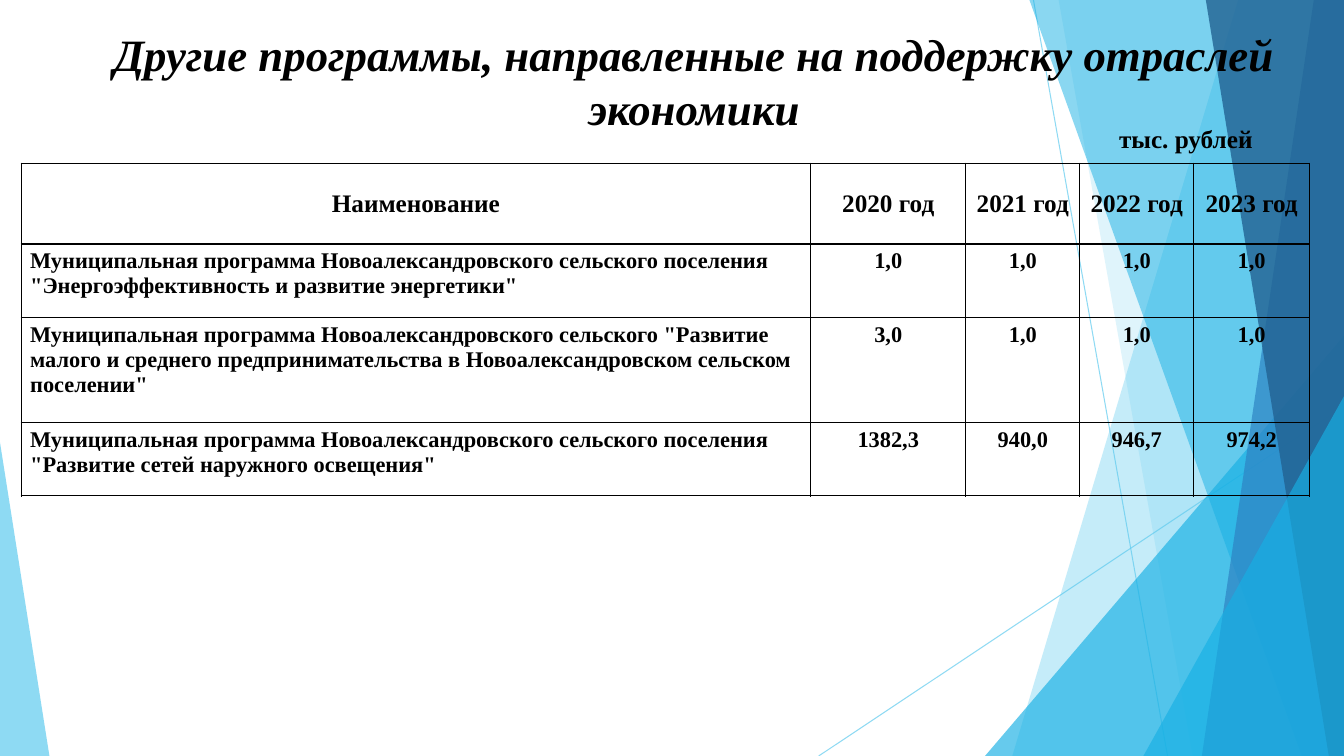
from lxml import etree
from pptx import Presentation
from pptx.dml.color import RGBColor
from pptx.enum import shapes, text
from pptx.oxml import parse_xml
from pptx.oxml.ns import nsdecls, qn
from pptx.util import Inches, Pt

BLACK = RGBColor(0, 0, 0)
SKY = RGBColor(0x5F, 0xCB, 0xEF)
CYAN = RGBColor(0x17, 0xB0, 0xE4)
BLUE = RGBColor(0x2E, 0x83, 0xC3)
NAVY = RGBColor(0x22, 0x62, 0x92)
FONT = "Times New Roman"
WIDTH, HEIGHT = 13.33, 7.5


def set_opacity(part, percent):
    color = part.find(".//" + qn("a:srgbClr"))
    etree.SubElement(color, qn("a:alpha")).set("val", str(percent * 1000))


def style_paragraph(paragraph, size, alignment):
    paragraph.alignment = alignment
    for run in paragraph.runs:
        run.font.name = FONT
        run.font.size = Pt(size)
        run.font.bold = True
        run.font.color.rgb = BLACK


prs = Presentation()
prs.slide_width, prs.slide_height = Inches(WIDTH), Inches(HEIGHT)
slide = prs.slides.add_slide(prs.slide_layouts[5])

# Thin rays
for x1, y1, x2, y2 in [(10.25, 0, 11.58, HEIGHT), (WIDTH, 4.03, 8.12, HEIGHT)]:
    ray = slide.shapes.add_connector(
        shapes.MSO_CONNECTOR.STRAIGHT, Inches(x1), Inches(y1), Inches(x2), Inches(y2))
    ray.line.color.rgb = SKY
    ray.line.width = Pt(0.75)
    set_opacity(ray.element.spPr, 70)
    etree.SubElement(ray.element.spPr, qn("a:effectLst"))

# Facets from back to front: bands run from a top x to a bottom x and on to the
# right edge; triangles have left, top, width and the side of their apex
facets = [
    ("band", (12.28, 10.04), SKY, 36),
    ("band", (10.5, 11.83), SKY, 20),
    ("triangle", (9.77, 3.33, 3.56, 1), CYAN, 66),
    ("band", (10.21, 12.91), CYAN, 50),
    ("band", (13.03, 11.92), BLUE, 70),
    ("band", (11.96, 13.18), NAVY, 80),
    ("triangle", (11.34, 3.93, 1.99, 1), CYAN, 66),
    ("triangle", (0, 4.39, 0.49, 0), SKY, 70),
]
for kind, geometry, color, opacity in facets:
    if kind == "band":
        top_x, bottom_x = geometry
        outline = slide.shapes.build_freeform(Inches(top_x), 0)
        outline.add_line_segments(
            [(Inches(x), Inches(y)) for x, y in
             [(WIDTH, 0), (WIDTH, HEIGHT), (bottom_x, HEIGHT)]])
        facet = outline.convert_to_shape()
    else:
        left, top, width, apex = geometry
        facet = slide.shapes.add_shape(
            shapes.MSO_SHAPE.ISOSCELES_TRIANGLE,
            Inches(left), Inches(top), Inches(width), Inches(HEIGHT - top))
        facet.adjustments[0] = apex
    facet.shadow.inherit = False
    facet.fill.solid()
    facet.fill.fore_color.rgb = color
    facet.line.fill.background()
    set_opacity(facet.element.spPr, opacity)

# Title, brought in front of the facets
title = slide.shapes.title
slide.shapes.element.append(title.element)
title.left, title.top = Inches(1.04), Inches(0.29)
title.width, title.height = Inches(11.69), Inches(1.02)
frame = title.text_frame
frame.text = "Другие программы, направленные на поддержку отраслей экономики"
frame.word_wrap = True
frame.auto_size = text.MSO_AUTO_SIZE.NONE
frame.vertical_anchor = text.MSO_ANCHOR.MIDDLE
frame.margin_left = frame.margin_right = frame.margin_top = frame.margin_bottom = 0
style_paragraph(frame.paragraphs[0], 32, text.PP_ALIGN.CENTER)
title_font = frame.paragraphs[0].runs[0].font
title_font.italic = True
title_fill = title_font.fill._xPr.find(qn("a:solidFill"))
title_fill.addnext(parse_xml(
    f'<a:effectLst {nsdecls("a")}><a:outerShdw blurRad="38100" dist="38100" dir="2700000">'
    '<a:srgbClr val="000000"><a:alpha val="43000"/></a:srgbClr></a:outerShdw></a:effectLst>'))

# Programme table
rows = [
    ("Наименование", "2020 год", "2021 год", "2022 год", "2023 год"),
    ('Муниципальная программа Новоалександровского сельского поселения '
     '"Энергоэффективность и развитие энергетики"', "1,0", "1,0", "1,0", "1,0"),
    ('Муниципальная программа Новоалександровского сельского "Развитие малого и среднего '
     'предпринимательства в Новоалександровском сельском поселении"',
     "3,0", "1,0", "1,0", "1,0"),
    ('Муниципальная программа Новоалександровского сельского поселения '
     '"Развитие сетей наружного освещения"', "1382,3", "940,0", "946,7", "974,2"),
]
column_widths = [7.83, 1.54, 1.13, 1.13, 1.15]
row_heights = [0.8, 0.73, 1.04, 0.73]
programmes = slide.shapes.add_table(
    len(rows), len(column_widths), Inches(0.21), Inches(1.62),
    Inches(sum(column_widths)), Inches(sum(row_heights))).table
programmes.first_row = programmes.horz_banding = False
for column, width in zip(programmes.columns, column_widths):
    column.width = Inches(width)
for r, (row, height) in enumerate(zip(rows, row_heights)):
    programmes.rows[r].height = Inches(height)
    for c, value in enumerate(row):
        cell = programmes.cell(r, c)
        cell.text = value
        cell.margin_left = cell.margin_right = Inches(0.09)
        is_name = r > 0 and c == 0
        style_paragraph(cell.text_frame.paragraphs[0], 16 if r else 18,
                        text.PP_ALIGN.LEFT if is_name else text.PP_ALIGN.CENTER)
        cell.vertical_anchor = text.MSO_ANCHOR.TOP if r else text.MSO_ANCHOR.MIDDLE
        for side in ("lnL", "lnR", "lnT", "lnB"):
            cell._tc.tcPr.append(parse_xml(
                f'<a:{side} {nsdecls("a")} w="12700"><a:solidFill>'
                f'<a:srgbClr val="{BLACK}"/></a:solidFill></a:{side}>'))
        cell.fill.background()

# Unit of measure
unit = slide.shapes.add_textbox(Inches(11), Inches(1.17), Inches(1.99), Inches(0.4))
unit.text_frame.word_wrap = True
unit.text_frame.text = "тыс. рублей"
style_paragraph(unit.text_frame.paragraphs[0], 18, text.PP_ALIGN.LEFT)

prs.save("out.pptx")
